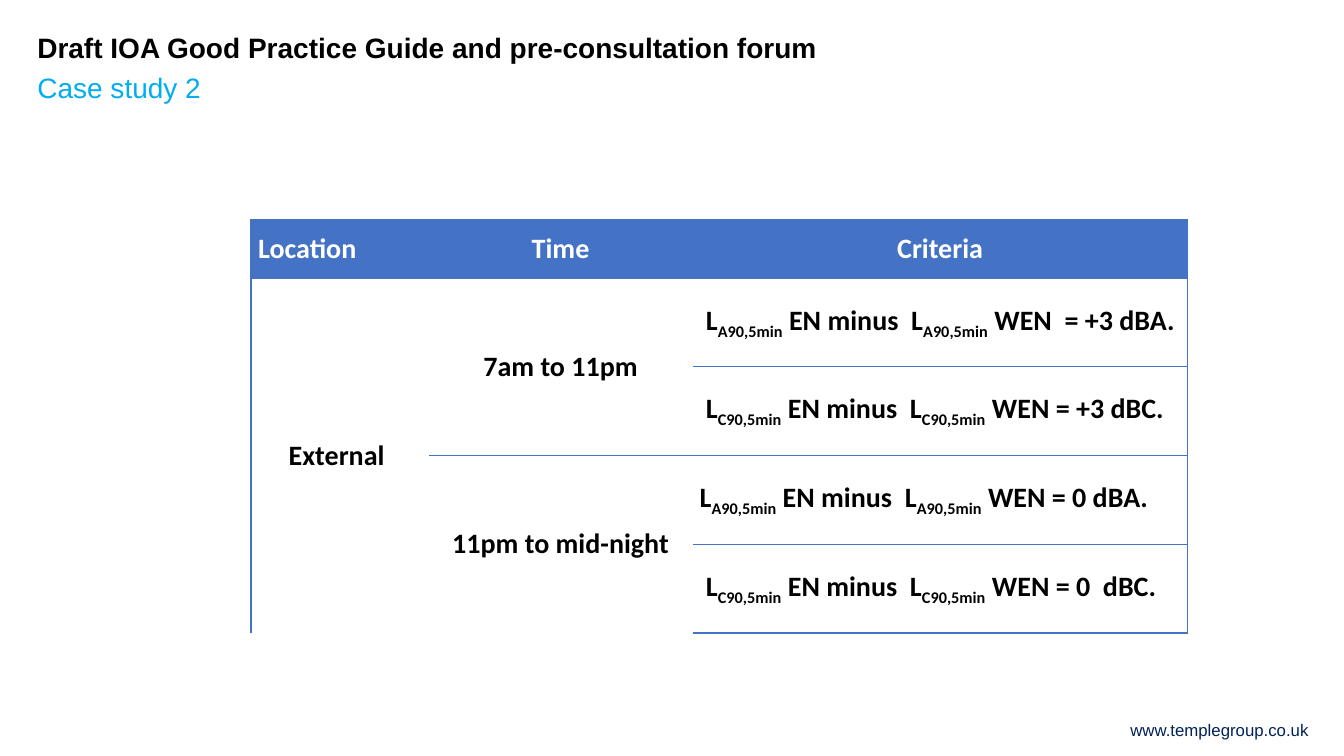
import lxml.etree
import pptx
import pptx.dml.color
import pptx.enum.text
import pptx.oxml.ns
import pptx.util

BLUE = pptx.dml.color.RGBColor(0x44, 0x72, 0xC4)
SKY = pptx.dml.color.RGBColor(0x00, 0xAE, 0xEF)
NAVY = pptx.dml.color.RGBColor(0x00, 0x21, 0x59)
BLACK = pptx.dml.color.RGBColor(0, 0, 0)
WHITE = pptx.dml.color.RGBColor(0xFF, 0xFF, 0xFF)

ALIGN = pptx.enum.text.PP_ALIGN
MIDDLE = pptx.enum.text.MSO_ANCHOR.MIDDLE
inches = pptx.util.Inches

COLUMNS = [1.76, 2.62, 4.91]
HEADER_HEIGHT, ROW_HEIGHT = 0.58, 0.88
HEADINGS = ["Location", "Time", "Criteria"]
PERIODS = ["7am to 11pm", "11pm to mid-night"]
CRITERIA = [
    (" L", "A90,5min", " WEN  = +3 dBA."),
    (" L", "C90,5min", " WEN = +3 dBC."),
    ("L", "A90,5min", " WEN = 0 dBA."),
    (" L", "C90,5min", " WEN = 0  dBC."),
]


def add_span(para, text, font, size, color, bold=False, baseline=0):
    """Add one formatted run to a paragraph."""
    span = para.add_run()
    span.text = text
    span.font.name = font
    span.font.size = pptx.util.Pt(size)
    span.font.bold = bold
    span.font.color.rgb = color
    if baseline:
        span.font._element.set("baseline", str(baseline * 1000))


def add_line(page, box, text, size, color, bold=False, align=ALIGN.LEFT):
    """Place a single line of Arial text in a box without margins."""
    frame = page.shapes.add_textbox(*map(inches, box)).text_frame
    frame.word_wrap = True
    frame.margin_left = frame.margin_right = frame.margin_top = frame.margin_bottom = 0
    para = frame.paragraphs[0]
    para.alignment = align
    add_span(para, text, "Arial", size, color, bold)


def add_heading(page, box):
    """Stack the title and subtitle at the top of the box."""
    left, top, width, height = box
    add_line(page, (left, top, width, height / 2),
             "Draft IOA Good Practice Guide and pre-consultation forum", 20, BLACK, bold=True)
    add_line(page, (left, top + height / 2, width, height / 2), "Case study 2", 20, SKY)


def set_borders(cell, sides):
    """Rule the named sides of a cell in blue and clear the others."""
    properties = cell._tc.get_or_add_tcPr()
    for side in "LRTB":
        line = lxml.etree.SubElement(properties, pptx.oxml.ns.qn("a:ln" + side), w="12700")
        if side in sides:
            fill = lxml.etree.SubElement(line, pptx.oxml.ns.qn("a:solidFill"))
            lxml.etree.SubElement(fill, pptx.oxml.ns.qn("a:srgbClr"), val=str(BLUE))
        else:
            lxml.etree.SubElement(line, pptx.oxml.ns.qn("a:noFill"))


def fill_cell(cell, spans, color, align):
    """Write (text, baseline) spans into a cell."""
    para = cell.text_frame.paragraphs[0]
    para.alignment = align
    for text, baseline in spans:
        add_span(para, text, "Calibri", 20, color, True, baseline)


def style_grid(table):
    """Set the margins, borders and fills of every cell."""
    row_spans = [len(CRITERIA), len(CRITERIA) // len(PERIODS), 1]
    for row in range(len(CRITERIA) + 1):
        for column, row_span in enumerate(row_spans):
            cell = table.cell(row, column)
            cell.vertical_anchor = MIDDLE
            cell.margin_left = cell.margin_right = inches(0.07)
            cell.margin_top = cell.margin_bottom = 0
            starts = row == 0 or (row - 1) % row_span == 0
            ends = row % row_span == 0
            sides = ("L", "", "R")[column] + "T" * starts + "B" * ends
            set_borders(cell, sides)
            if row == 0:
                cell.fill.solid()
                cell.fill.fore_color.rgb = BLUE
            else:
                cell.fill.background()
            if row and starts and row_span > 1:
                cell.merge(table.cell(row + row_span - 1, column))


def add_criteria_table(page, box):
    """Place the table of noise criteria by location and time in the box."""
    table = page.shapes.add_table(len(CRITERIA) + 1, len(COLUMNS), *map(inches, box)).table
    table.horz_banding = False
    for column, width in zip(table.columns, COLUMNS):
        column.width = inches(width)
    for index, row in enumerate(table.rows):
        row.height = inches(ROW_HEIGHT if index else HEADER_HEIGHT)
    style_grid(table)
    for column, heading in enumerate(HEADINGS):
        fill_cell(table.cell(0, column), [(heading, 0)], WHITE,
                  ALIGN.CENTER if column else ALIGN.LEFT)
    fill_cell(table.cell(1, 0), [("External ", 0)], BLACK, ALIGN.CENTER)
    for index, period in enumerate(PERIODS):
        fill_cell(table.cell(1 + 2 * index, 1), [(period, 0)], BLACK, ALIGN.CENTER)
    for row, (level, index, limit) in enumerate(CRITERIA, 1):
        spans = [(level, 0), (index, -25), (" EN minus  L", 0), (index, -25), (limit, 0)]
        fill_cell(table.cell(row, 2), spans, BLACK, ALIGN.LEFT)


def main():
    """Build the slide and save the deck."""
    deck = pptx.Presentation()
    deck.slide_width, deck.slide_height = inches(13.33), inches(7.5)
    page = deck.slides.add_slide(deck.slide_layouts[6])
    add_line(page, (9.87, 7.14, 3.11, 0.2), "www.templegroup.co.uk", 12, NAVY, align=ALIGN.RIGHT)
    add_heading(page, (0.37, 0.3, 10.47, 0.8))
    table_height = HEADER_HEIGHT + ROW_HEIGHT * len(CRITERIA)
    add_criteria_table(page, (2.49, 2.18, sum(COLUMNS), table_height))
    deck.save("out.pptx")


if __name__ == "__main__":
    main()
